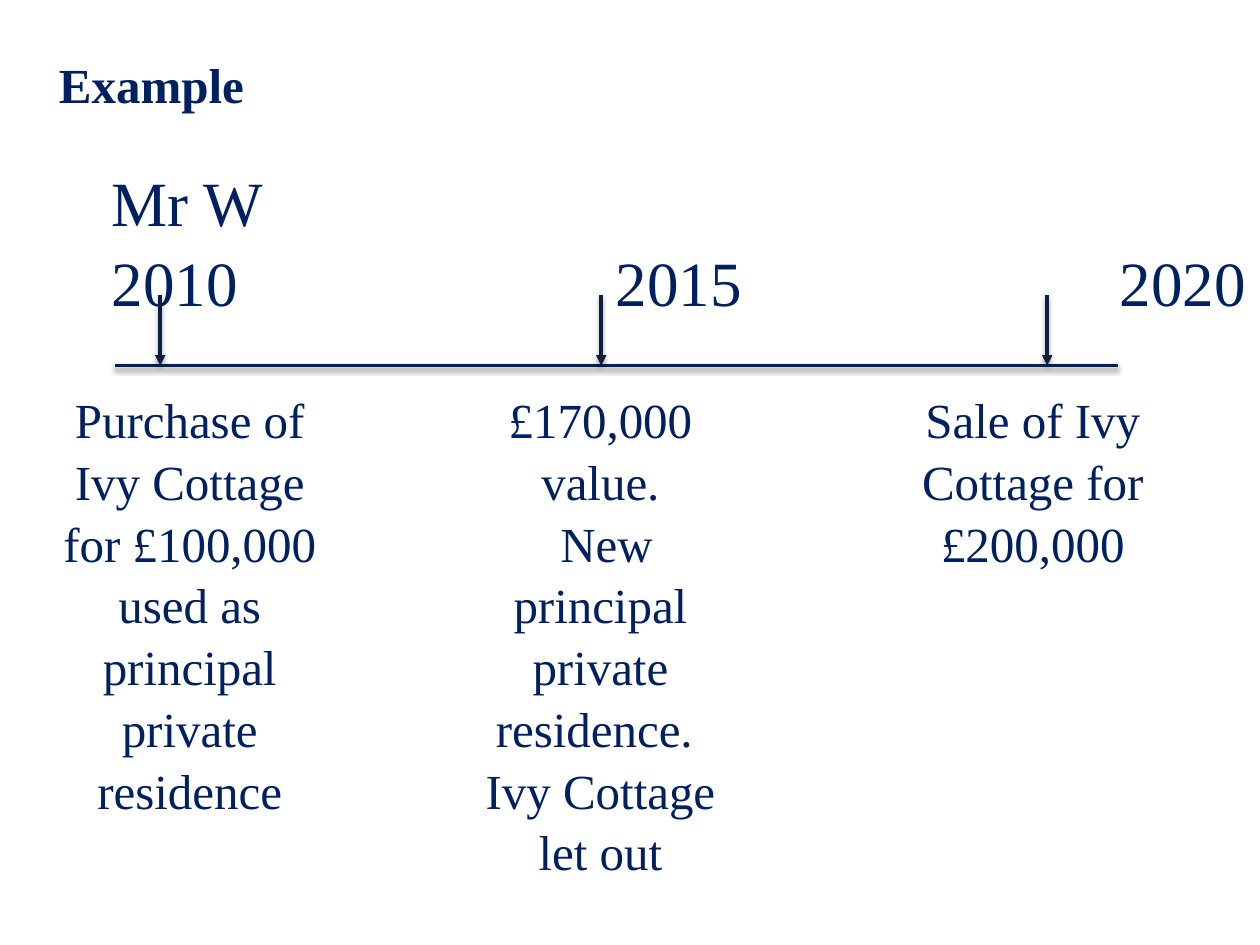
from lxml import etree
from pptx import Presentation
from pptx import util as u
from pptx.dml.color import RGBColor
from pptx.enum import shapes, text
from pptx.oxml import parse_xml
from pptx.oxml.ns import nsdecls, qn

NAVY = RGBColor(0x00, 0x20, 0x60)
DARK_NAVY = RGBColor(0x0F, 0x1E, 0x3C)

SOFT_SHADOW = f"""<a:effectLst {nsdecls('a')}>
  <a:outerShdw blurRad="39400" dist="20300" dir="5400000" rotWithShape="0">
    <a:srgbClr val="000000"><a:alpha val="38000"/></a:srgbClr>
  </a:outerShdw>
</a:effectLst>"""


class TimelineSlide:
    font_name = "Times New Roman"
    line_spacing = 1.05
    line_width = u.Pt(2)

    def __init__(self, slide):
        self.slide = slide

    def text_box(self, left, top, width, height, paragraphs, size=28,
                 align=text.PP_ALIGN.LEFT, bold=None, tabs=()):
        """Add a text box; lengths and tab stops are in centimetres."""
        box = self.slide.shapes.add_textbox(
            u.Cm(left), u.Cm(top), u.Cm(width), u.Cm(height))
        frame = box.text_frame
        frame.word_wrap = True
        frame.auto_size = text.MSO_AUTO_SIZE.SHAPE_TO_FIT_TEXT
        frame.text = "\n".join(paragraphs)
        for paragraph in frame.paragraphs:
            paragraph.alignment = align
            paragraph.line_spacing = self.line_spacing
            if tabs:
                self.tab_stops(paragraph, tabs)
            for run in paragraph.runs:
                run.font.name = self.font_name
                run.font.size = u.Pt(size)
                run.font.bold = bold
                run.font.color.rgb = NAVY

    def tab_stops(self, paragraph, positions):
        properties = paragraph._p.get_or_add_pPr()
        tab_list = etree.SubElement(properties, qn("a:tabLst"))
        for position in positions:
            etree.SubElement(tab_list, qn("a:tab"),
                             pos=str(u.Cm(position)), algn="l")

    def line(self, x1, y1, x2, y2, color, arrow=False):
        connector = self.slide.shapes.add_connector(
            shapes.MSO_CONNECTOR.STRAIGHT,
            u.Cm(x1), u.Cm(y1), u.Cm(x2), u.Cm(y2))
        connector.line.color.rgb = color
        connector.line.width = self.line_width
        if arrow:
            etree.SubElement(connector.line._get_or_add_ln(),
                             qn("a:tailEnd"), type="triangle")
        connector._element.spPr.append(parse_xml(SOFT_SHADOW))


def main():
    presentation = Presentation()
    presentation.slide_width = u.Cm(25.4)
    presentation.slide_height = u.Cm(19.05)
    page = TimelineSlide(
        presentation.slides.add_slide(presentation.slide_layouts[6]))

    page.text_box(2, 3.1, 23.42, 3.33, ["Mr W", "2010\t2015\t2020"],
                  size=36, tabs=(10.16, 20.32))

    axis_y = 7.37
    page.line(2.31, axis_y, 22.53, axis_y, NAVY)

    # Arrow x, text left, text width, text height, paragraphs
    events = [
        (3.23, 0.84, 5.97, 7.44,
         ["Purchase of Ivy Cottage for £100,000 used as principal "
          "private residence"]),
        (12.12, 9.12, 5.97, 8.64,
         ["£170,000 value.", " New principal private residence. ",
          "Ivy Cottage let out"]),
        (21.11, 18.14, 5.36, 3.84,
         ["Sale of Ivy Cottage for £200,000"]),
    ]
    for arrow_x, left, width, height, paragraphs in events:
        page.text_box(left, 7.67, width, height, paragraphs,
                      align=text.PP_ALIGN.CENTER)
        page.line(arrow_x, 5.94, arrow_x, axis_y, DARK_NAVY, arrow=True)

    page.text_box(0.94, 0.91, 16.54, 1.45, ["Example"], bold=True)

    presentation.save("out.pptx")


if __name__ == "__main__":
    main()
